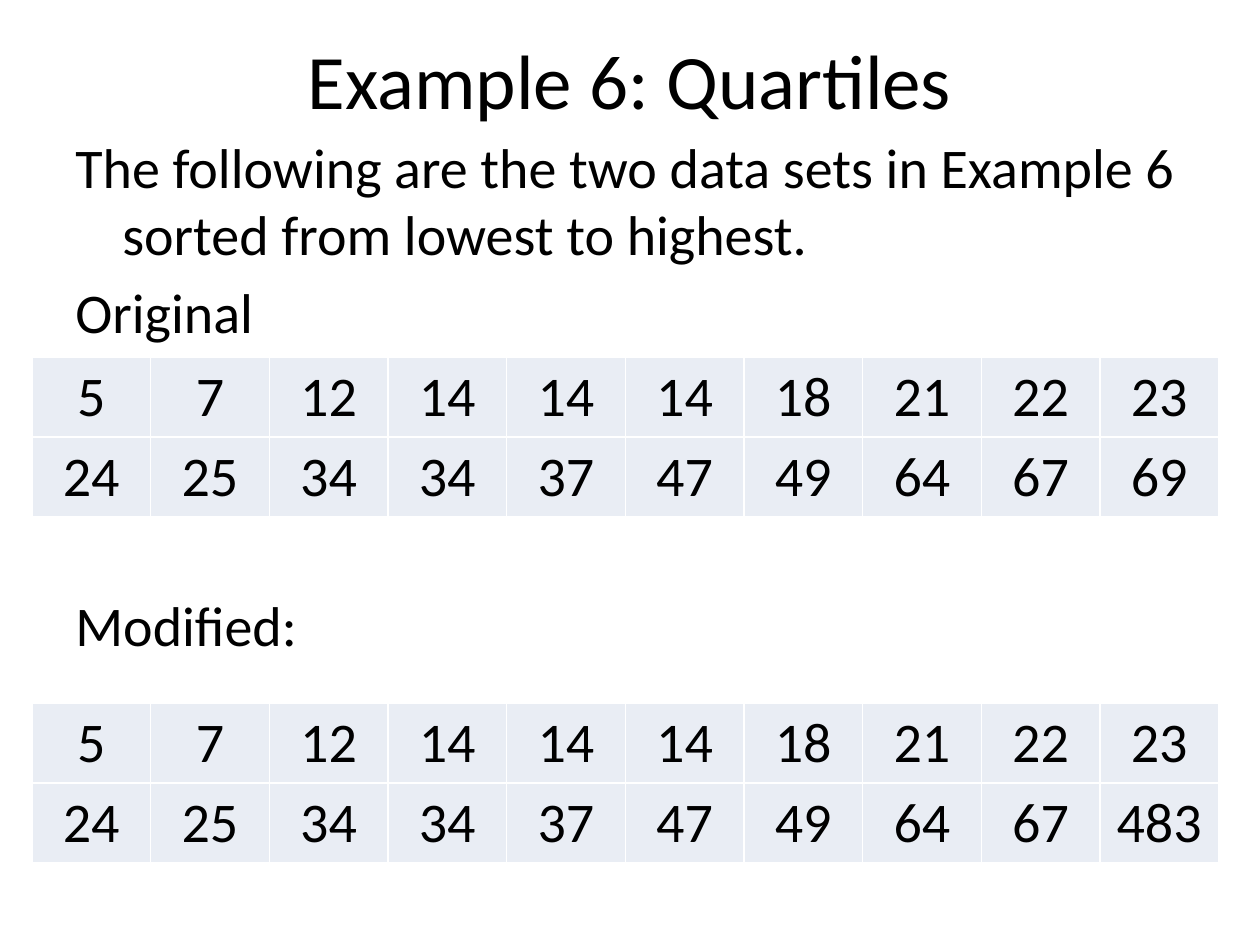
from lxml import etree
from pptx import Presentation, util as u
from pptx.dml.color import RGBColor
from pptx.enum import text as t
from pptx.oxml.ns import qn

SCALE = 914400 // 126
INK, FILL, EDGE = "000000", "E9EDF4", "FFFFFF"
SHARED = "5 7 12 14 14 14 18 21 22 23 24 25 34 34 37 47 49 64 67".split()
COLS = 10


def px(n):
    return u.Emu(n * SCALE)


def color(code):
    return RGBColor.from_string(code)


def apply(item, form):
    for key, val in form.items():
        setattr(item, key, val)


def write(para, words, size, form):
    run = para.add_run()
    run.text = words
    apply(run.font, {"name": "Calibri", "size": u.Pt(size)})
    run.font.color.rgb = color(INK)
    apply(para, form)


def add_box(slide, area, anchor):
    frame = slide.shapes.add_textbox(*map(px, area)).text_frame
    apply(frame, {"word_wrap": True, "vertical_anchor": anchor})
    return frame


def add_title(slide, words):
    frame = add_box(slide, (63, 0, 1134, 158), t.MSO_ANCHOR.MIDDLE)
    write(frame.paragraphs[0], words, 44, {"alignment": t.PP_ALIGN.CENTER})


def add_body(slide, lines):
    frame = add_box(slide, (63, 126, 1134, 798), t.MSO_ANCHOR.TOP)
    for i, (words, gap) in enumerate(lines):
        para = frame.add_paragraph() if i else frame.paragraphs[0]
        write(para, words, 32, {"space_before": u.Pt(gap)})
        props = para._p.get_or_add_pPr()
        props.set("marL", str(px(47)))
        props.set("indent", str(-px(47)))


def add_edges(cell):
    props = cell._tc.get_or_add_tcPr()
    for i, side in enumerate(("lnL", "lnR", "lnT", "lnB")):
        line = etree.Element(qn("a:" + side), w=str(u.Pt(1)))
        fill = etree.SubElement(line, qn("a:solidFill"))
        etree.SubElement(fill, qn("a:srgbClr"), val=EDGE)
        props.insert(i, line)


def add_grid(slide, top, data):
    rows = len(data) // COLS
    area = map(px, (32, top, 1187, 80 * rows))
    table = slide.shapes.add_table(rows, COLS, *area).table
    apply(table, {"first_row": False, "horz_banding": False})
    for cell, words in zip(table.iter_cells(), data):
        cell.vertical_anchor = t.MSO_ANCHOR.MIDDLE
        cell.fill.solid()
        cell.fill.fore_color.rgb = color(FILL)
        add_edges(cell)
        write(cell.text_frame.paragraphs[0], words, 32,
              {"alignment": t.PP_ALIGN.CENTER})


def main():
    deck = Presentation()
    apply(deck, {"slide_width": px(1260), "slide_height": px(945)})
    slide = deck.slides.add_slide(deck.slide_layouts[6])
    add_title(slide, "Example 6: Quartiles")
    add_body(slide, [
        ("The following are the two data sets in Example 6 "
         "sorted from lowest to highest.", 6.4),
        ("Original", 6.4),
        ("Modified:", 140.4),
    ])
    for top, last in ((357, "69"), (703, "483")):
        add_grid(slide, top, SHARED + [last])
    deck.save("out.pptx")


if __name__ == "__main__":
    main()
